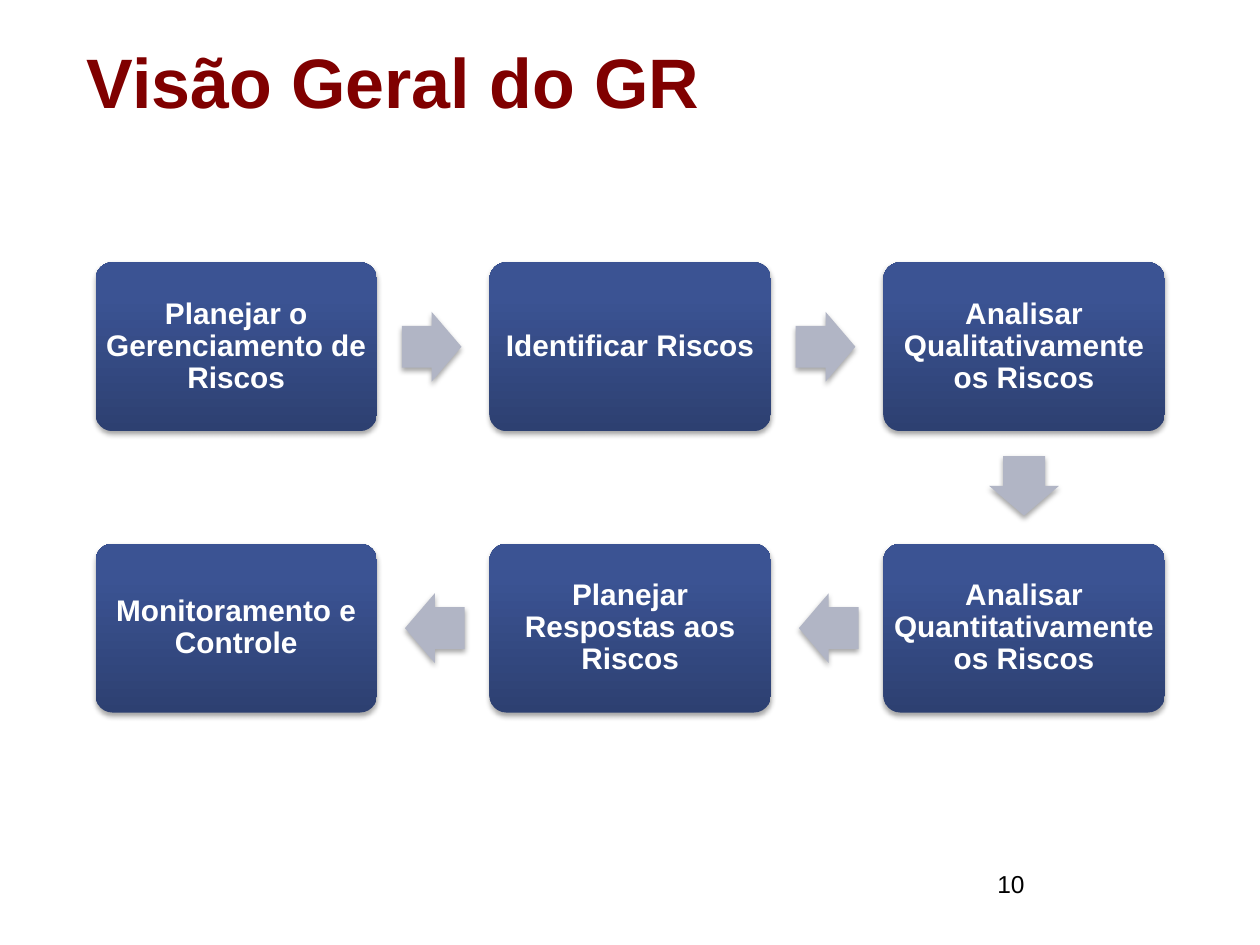
from dataclasses import dataclass

from lxml import etree
from pptx import Presentation
from pptx.dml.color import RGBColor
from pptx.enum.shapes import MSO_SHAPE
from pptx.enum.text import MSO_ANCHOR, PP_ALIGN
from pptx.oxml.ns import qn
from pptx.util import Pt

ROUNDED = MSO_SHAPE.ROUNDED_RECTANGLE
ARROW = MSO_SHAPE.RIGHT_ARROW
TOP, MIDDLE = MSO_ANCHOR.TOP, MSO_ANCHOR.MIDDLE
LEFT, CENTER, RIGHT = PP_ALIGN.LEFT, PP_ALIGN.CENTER, PP_ALIGN.RIGHT

COLORS = {
    "title": "800000",
    "number": "000000",
    "label": "FFFFFF",
    "arrow": "B1B5C5",
    "shadow": "000000",
    "box_bottom": "2D4071",
    "box_middle": "3B5393",
    "box_top": "395295",
}
BOX_STOPS = ((0, "box_bottom"), (80, "box_middle"), (100, "box_top"))
FONT = "Arial"
GRID_LEFT, GRID_TOP = 54.6, 149.9
BOX_WIDTH, BOX_HEIGHT = 160.8, 96.5
COLUMN_STEP, ROW_STEP = 225.1, 160.8
ARROW_LENGTH, ARROW_HEIGHT, ARROW_GAP = 34.1, 39.9, 14.2


@dataclass(frozen=True)
class Step:
    """A process step at a grid position."""

    label: str
    column: int
    row: int

    @property
    def left(self) -> float:
        """Return the left edge in points."""
        return GRID_LEFT + self.column * COLUMN_STEP

    @property
    def top(self) -> float:
        """Return the top edge in points."""
        return GRID_TOP + self.row * ROW_STEP


STEPS = (
    Step("Planejar o Gerenciamento de Riscos", 0, 0),
    Step("Identificar Riscos", 1, 0),
    Step("Analisar Qualitativamente os Riscos", 2, 0),
    Step("Analisar Quantitativamente os Riscos", 2, 1),
    Step("Planejar Respostas aos Riscos", 1, 1),
    Step("Monitoramento e Controle", 0, 1),
)


def write(shape, text: str, size: float, color: str, bold: bool, align, anchor) -> None:
    """Write one formatted paragraph into a shape."""
    frame = shape.text_frame
    frame.text = text
    frame.word_wrap = True
    frame.vertical_anchor = anchor
    paragraph = frame.paragraphs[0]
    paragraph.alignment = align
    font = paragraph.runs[0].font
    font.name, font.size, font.bold = FONT, Pt(size), bold
    font.color.rgb = RGBColor.from_string(COLORS[color])


def add_color(parent, color: str):
    """Append a hex colour element to an XML parent."""
    return etree.SubElement(parent, qn("a:srgbClr"), val=COLORS[color])


def finish_outline(shape) -> None:
    """Remove the outline and give the shape a soft shadow below."""
    shape.line.fill.background()
    shape.shadow.inherit = False
    effects = shape._element.spPr.find(qn("a:effectLst"))
    shadow = etree.SubElement(
        effects, qn("a:outerShdw"), blurRad=str(Pt(3.1)), dist=str(Pt(1.8)),
        dir="5400000", rotWithShape="0",
    )
    etree.SubElement(add_color(shadow, "shadow"), qn("a:alpha"), val="35000")


def add_box(slide, step: Step) -> None:
    """Draw a step as a rounded box with a vertical gradient."""
    shape = slide.shapes.add_shape(
        ROUNDED, Pt(step.left), Pt(step.top), Pt(BOX_WIDTH), Pt(BOX_HEIGHT)
    )
    shape.adjustments[0] = 0.1
    shape.fill.gradient()
    shape.fill.gradient_angle = 90
    stops = shape._element.spPr.find(f".//{qn('a:gsLst')}")
    for stop in list(stops):
        stops.remove(stop)
    for position, color in BOX_STOPS:
        stop = etree.SubElement(stops, qn("a:gs"), pos=str(position * 1000))
        add_color(stop, color)
    finish_outline(shape)
    write(shape, step.label, 17, "label", True, CENTER, MIDDLE)
    frame = shape.text_frame
    frame.margin_left = frame.margin_right = Pt(2.2)
    frame.margin_top = frame.margin_bottom = Pt(2.2)
    frame.paragraphs[0].line_spacing = 0.9


def add_arrow(slide, start: Step, end: Step) -> None:
    """Draw a block arrow just outside one step, pointing to the next."""
    across, down = end.column - start.column, end.row - start.row
    reach = ARROW_GAP + ARROW_LENGTH / 2
    center_x = start.left + BOX_WIDTH / 2 + across * (BOX_WIDTH / 2 + reach)
    center_y = start.top + BOX_HEIGHT / 2 + down * (BOX_HEIGHT / 2 + reach)
    shape = slide.shapes.add_shape(
        ARROW, Pt(center_x - ARROW_LENGTH / 2), Pt(center_y - ARROW_HEIGHT / 2),
        Pt(ARROW_LENGTH), Pt(ARROW_HEIGHT),
    )
    shape.adjustments[0], shape.adjustments[1] = 0.6, 0.5
    shape.rotation = 90 if down else 90 * (1 - across)
    shape.fill.solid()
    shape.fill.fore_color.rgb = RGBColor.from_string(COLORS["arrow"])
    finish_outline(shape)


def main() -> None:
    """Build and save the risk management overview."""
    presentation = Presentation()
    presentation.slide_width, presentation.slide_height = Pt(720), Pt(540)
    slide = presentation.slides.add_slide(presentation.slide_layouts[6])
    title = slide.shapes.add_textbox(Pt(42.5), Pt(20.2), Pt(471.6), Pt(51.1))
    write(title, "Visão Geral do GR", 40, "title", True, LEFT, MIDDLE)
    number = slide.shapes.add_textbox(Pt(424.8), Pt(493.2), Pt(167.8), Pt(37.4))
    write(number, "10", 14, "number", False, RIGHT, TOP)
    for step in STEPS:
        add_box(slide, step)
    for start, end in zip(STEPS, STEPS[1:]):
        add_arrow(slide, start, end)
    presentation.save("out.pptx")


if __name__ == "__main__":
    main()
